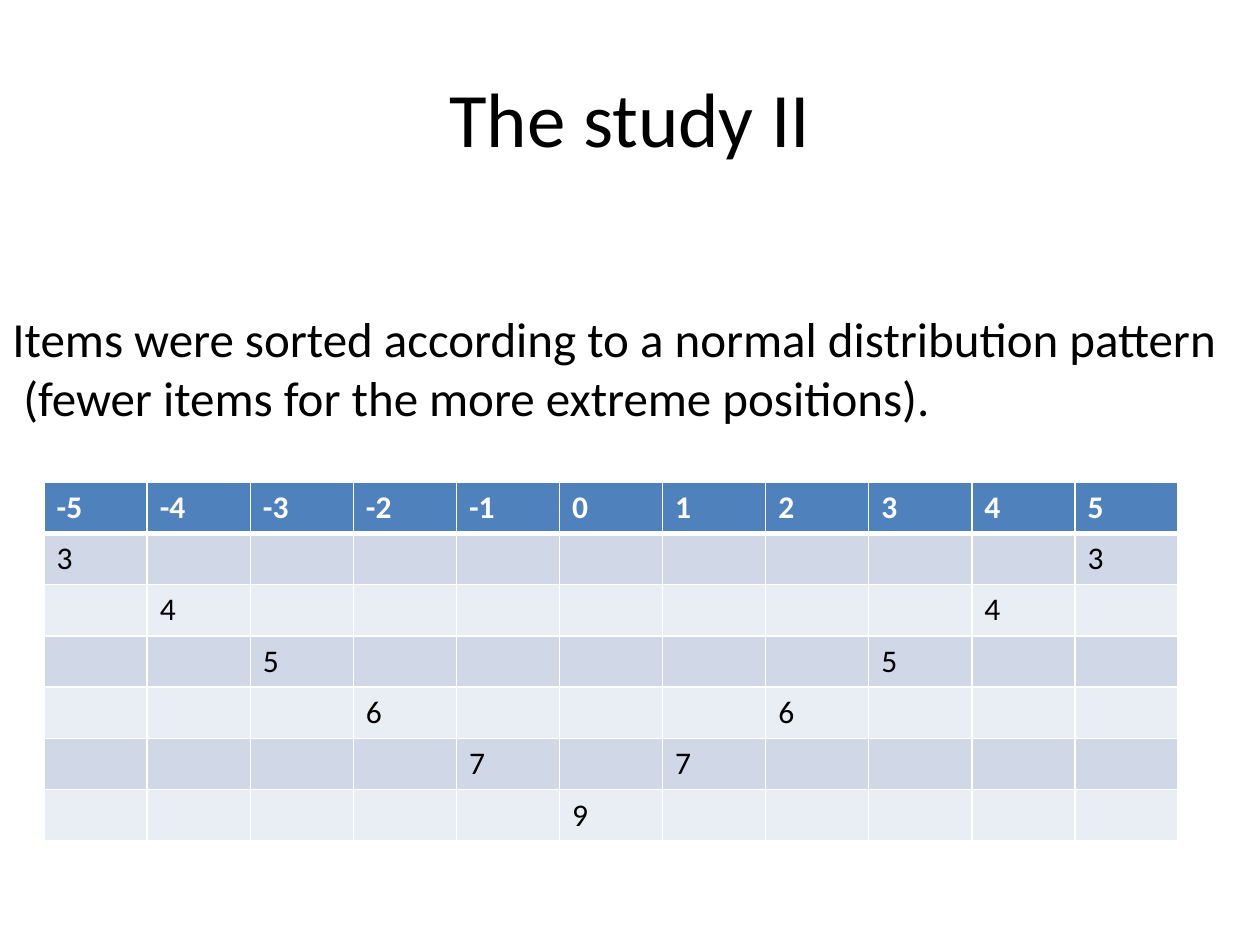
from dataclasses import dataclass

from lxml.etree import SubElement
from pptx import Presentation
from pptx.dml.color import RGBColor as Color
from pptx.enum.text import MSO_ANCHOR as Anchor, MSO_AUTO_SIZE as AutoSize, PP_ALIGN as Align
from pptx.oxml.ns import qn
from pptx.util import Inches, Pt


@dataclass(frozen=True)
class Theme:
    font: str = "Calibri"
    title_size: int = 44
    body_size: int = 28
    cell_size: int = 18
    ink: str = "000000"
    paper: str = "FFFFFF"
    header: str = "4F81BD"
    bands: tuple = ("D0D8E8", "E9EDF4")
    rule: int = 1
    header_rule: int = 3


THEME = Theme()
WIDTH, HEIGHT = Inches(10), Inches(7.5)
POSITIONS = range(-5, 6)
ITEMS_BY_DISTANCE = {5: 3, 4: 4, 3: 5, 2: 6, 1: 7, 0: 9}


def share(left, top, width, height):
    """Turn shares of the slide's size into a box of lengths."""
    return int(left * WIDTH), int(top * HEIGHT), int(width * WIDTH), int(height * HEIGHT)


def write(para, text, size=THEME.body_size, color=THEME.ink, bold=False, align=Align.LEFT):
    para.alignment = align
    span = para.add_run()
    span.text = text
    span.font.name = THEME.font
    span.font.size = Pt(size)
    span.font.bold = bold
    span.font.color.rgb = Color.from_string(color)


def place_title(page, box, text):
    title = page.shapes.title
    title.left, title.top, title.width, title.height = box
    title.text_frame.vertical_anchor = Anchor.MIDDLE
    write(title.text_frame.paragraphs[0], text, size=THEME.title_size, align=Align.CENTER)


def place_statement(page, box, lines):
    frame = page.shapes.add_textbox(*box).text_frame
    frame.word_wrap = False
    frame.auto_size = AutoSize.SHAPE_TO_FIT_TEXT
    for number, line in enumerate(lines):
        write(frame.add_paragraph() if number else frame.paragraphs[0], line)


def draw_borders(cell, top, bottom):
    properties = cell._tc.get_or_add_tcPr()
    widths = {"a:lnL": THEME.rule, "a:lnR": THEME.rule, "a:lnT": top, "a:lnB": bottom}
    for place, (tag, width) in enumerate(widths.items()):
        line = SubElement(properties, qn(tag), w=str(Pt(width)))
        fill = SubElement(line, qn("a:solidFill"))
        SubElement(fill, qn("a:srgbClr"), val=THEME.paper)
        properties.insert(place, line)


def place_distribution(page, box):
    """Each row holds the item count of the positions equally far from zero."""
    left, top, width, height = box
    rows, columns = len(ITEMS_BY_DISTANCE) + 1, len(POSITIONS)
    table = page.shapes.add_table(rows, columns, *box).table
    for column in table.columns:
        column.width = width // columns
    for row in table.rows:
        row.height = height // rows

    for row, distance in enumerate([None, *ITEMS_BY_DISTANCE]):
        is_header = row == 0
        fill = THEME.header if is_header else THEME.bands[(row - 1) % 2]
        for column, position in enumerate(POSITIONS):
            cell = table.cell(row, column)
            cell.fill.solid()
            cell.fill.fore_color.rgb = Color.from_string(fill)
            draw_borders(cell,
                         top=THEME.header_rule if row == 1 else THEME.rule,
                         bottom=THEME.header_rule if is_header else THEME.rule)
            para = cell.text_frame.paragraphs[0]
            if is_header:
                write(para, str(position), size=THEME.cell_size, color=THEME.paper, bold=True)
            elif abs(position) == distance:
                write(para, str(ITEMS_BY_DISTANCE[distance]), size=THEME.cell_size)


def main():
    deck = Presentation()
    deck.slide_width, deck.slide_height = WIDTH, HEIGHT
    page = deck.slides.add_slide(deck.slide_layouts.get_by_name("Title Only"))
    place_title(page, share(0.05, 0.04, 0.9, 1 / 6), "The study II")
    place_distribution(page, share(0.035, 0.51, 0.9, 0.38))
    place_statement(page, share(0, 0.32, 0.99, 0.14), [
        "Items were sorted according to a normal distribution pattern",
        " (fewer items for the more extreme positions).",
    ])
    deck.save("out.pptx")


if __name__ == "__main__":
    main()
